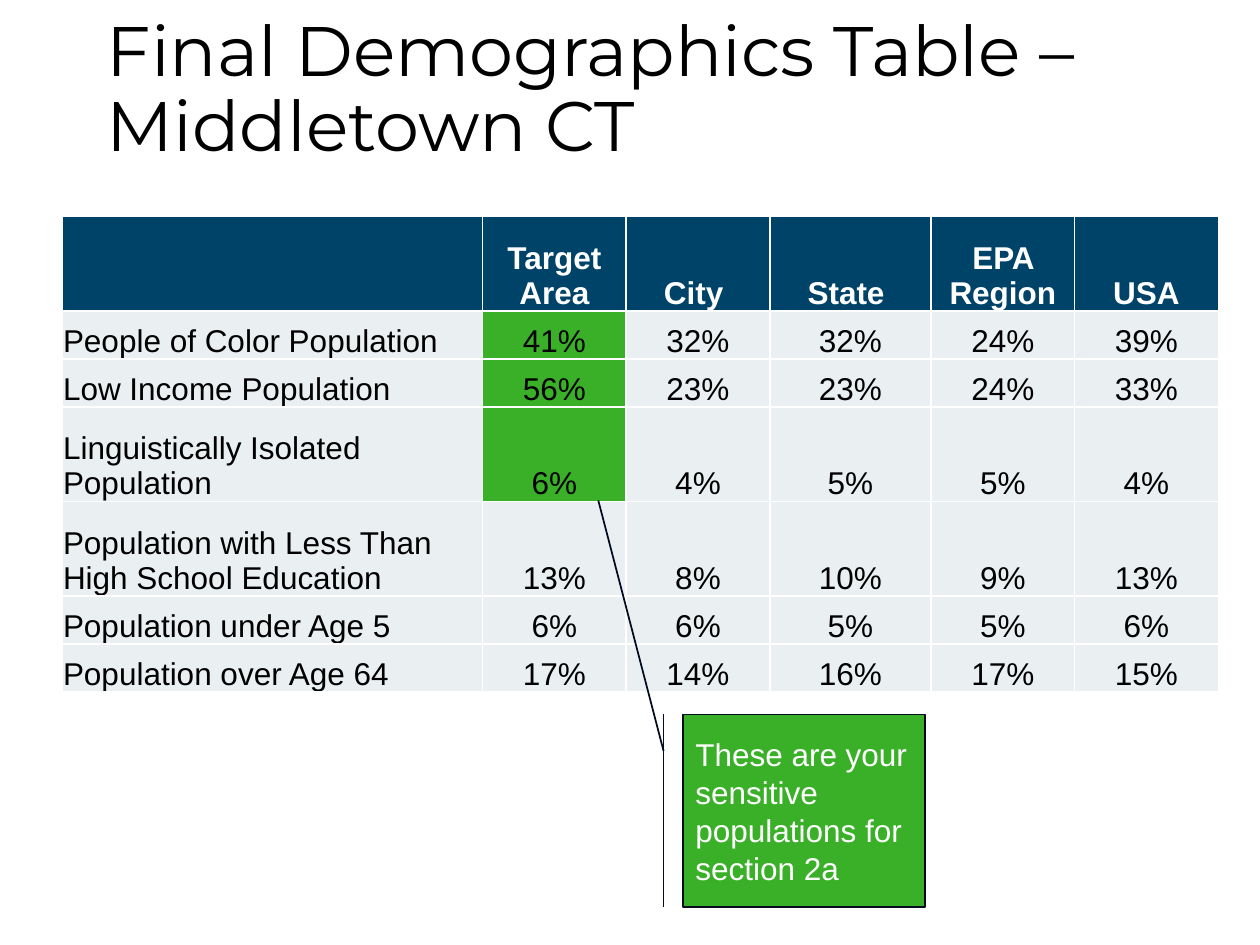
from lxml.etree import SubElement
from pptx import Presentation
from pptx.dml.color import RGBColor
from pptx.enum.shapes import MSO_SHAPE as Shape
from pptx.enum.text import MSO_ANCHOR as Anchor, PP_ALIGN as Align
from pptx.oxml.ns import qn
from pptx.util import Inches, Pt

COLORS = {
    "navy": "004369",
    "green": "3AB028",
    "pale": "EAF0F2",
    "outline": "030B21",
    "white": "FFFFFF",
    "black": "000000",
}
COLUMN_WIDTHS = [3.34, 1.14, 1.14, 1.28, 1.14, 1.14]
ROW_HEIGHTS = [0.75, 0.38, 0.38, 0.75, 0.75, 0.38, 0.38]
DEMOGRAPHICS = [
    ["", "Target Area", "City ", "State ", "EPA Region", "USA"],
    ["People of Color Population", "41%", "32%", "32%", "24%", "39%"],
    ["Low Income Population", "56%", "23%", "23%", "24%", "33%"],
    ["Linguistically Isolated Population", "6%", "4%", "5%", "5%", "4%"],
    ["Population with Less Than High School Education",
     "13%", "8%", "10%", "9%", "13%"],
    ["Population under Age 5", "6%", "6%", "5%", "5%", "6%"],
    ["Population over Age 64", "17%", "14%", "16%", "17%", "15%"],
]
SENSITIVE_ROWS = (1, 2, 3)
TARGET_COLUMN = 1


def rgb(name):
    return RGBColor.from_string(COLORS[name])


def write(frame, text, size=18, font="Arial", color="black", bold=False,
          align=Align.LEFT, spacing=None):
    paragraph = frame.paragraphs[0]
    paragraph.alignment = align
    paragraph.line_spacing = spacing
    run = paragraph.add_run()
    run.text = text
    run.font.name = font
    run.font.size = Pt(size)
    run.font.bold = bold
    run.font.color.rgb = rgb(color)


def add_title(slide, left, top, width, height):
    title = slide.shapes.add_textbox(left, top, width, height)
    frame = title.text_frame
    frame.word_wrap = True
    frame.vertical_anchor = Anchor.MIDDLE
    write(frame, "Final Demographics Table – Middletown CT", size=40,
          font="Montserrat", spacing=0.9)


def add_borders(cell, color, width):
    """Must run before the cell's fill is set, as borders come first in the XML."""
    properties = cell._tc.get_or_add_tcPr()
    for side in ("a:lnL", "a:lnR", "a:lnT", "a:lnB"):
        border = SubElement(properties, qn(side), w=str(Pt(width)))
        fill = SubElement(border, qn("a:solidFill"))
        SubElement(fill, qn("a:srgbClr"), val=COLORS[color])


def cell_fill(row, column):
    if row == 0:
        return "navy"
    if row in SENSITIVE_ROWS and column == TARGET_COLUMN:
        return "green"
    return "pale"


def format_cell(cell, text, row, column):
    add_borders(cell, "white", 1)
    cell.fill.solid()
    cell.fill.fore_color.rgb = rgb(cell_fill(row, column))
    cell.vertical_anchor = Anchor.BOTTOM
    cell.margin_left = cell.margin_right = cell.margin_top = Inches(0.01)
    cell.margin_bottom = 0
    is_header = row == 0
    write(cell.text_frame, text, bold=is_header,
          color="white" if is_header else "black",
          align=Align.LEFT if column == 0 else Align.CENTER)


def add_demographics_table(slide, left, top, width, height):
    table = slide.shapes.add_table(len(ROW_HEIGHTS), len(COLUMN_WIDTHS),
                                   left, top, width, height).table
    for column, inches in zip(table.columns, COLUMN_WIDTHS):
        column.width = Inches(inches)
    for row, inches in zip(table.rows, ROW_HEIGHTS):
        row.height = Inches(inches)
    for r, values in enumerate(DEMOGRAPHICS):
        for c, text in enumerate(values):
            format_cell(table.cell(r, c), text, r, c)


def add_sensitive_callout(slide, left, top, width, height):
    callout = slide.shapes.add_shape(Shape.LINE_CALLOUT_1_BORDER_AND_ACCENT_BAR,
                                     left, top, width, height)
    # Pointer start and end, as (y, x) fractions of the box
    for i, fraction in enumerate((0.19, -0.08, -1.11, -0.35)):
        callout.adjustments[i] = fraction
    callout.shadow.inherit = False
    callout.fill.solid()
    callout.fill.fore_color.rgb = rgb("green")
    callout.line.color.rgb = rgb("outline")
    callout.line.width = Pt(1)
    frame = callout.text_frame
    frame.word_wrap = True
    frame.vertical_anchor = Anchor.MIDDLE
    write(frame, "These are your sensitive populations for section 2a",
          color="white")


def main():
    deck = Presentation()
    deck.slide_width, deck.slide_height = Inches(10), Inches(7.5)
    slide = deck.slides.add_slide(deck.slide_layouts[6])
    add_title(slide, Inches(0.75), Inches(0), Inches(8.62), Inches(1.45))
    add_demographics_table(slide, Inches(0.49), Inches(1.72),
                           Inches(sum(COLUMN_WIDTHS)), Inches(sum(ROW_HEIGHTS)))
    add_sensitive_callout(slide, Inches(5.42), Inches(5.67),
                          Inches(1.92), Inches(1.53))
    deck.save("out.pptx")


if __name__ == "__main__":
    main()
